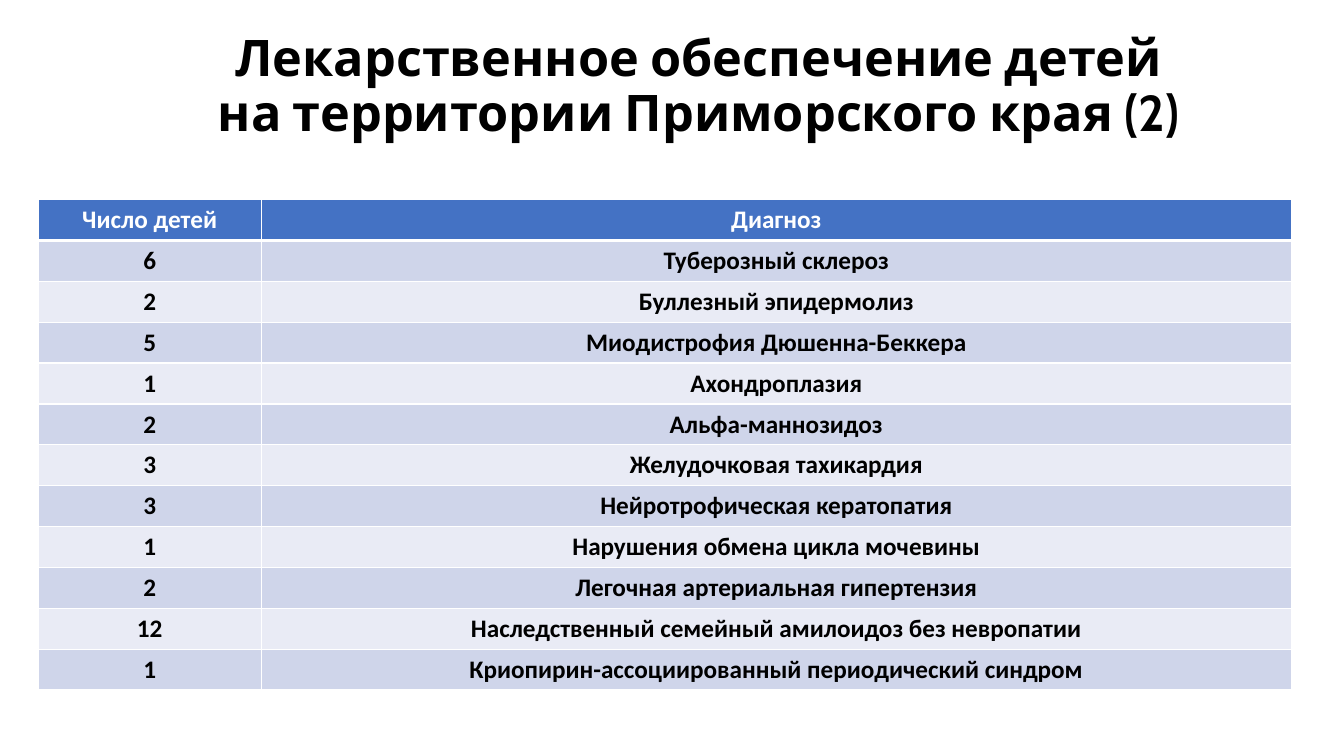
"""Build a slide with a table of children's diagnoses in Primorsky Krai."""
from lxml.etree import SubElement
from pptx import Presentation
from pptx.dml.color import RGBColor
from pptx.enum.text import MSO_ANCHOR, MSO_AUTO_SIZE, PP_ALIGN
from pptx.oxml.ns import qn
from pptx.util import Inches, Pt

WHITE = RGBColor(0xFF, 0xFF, 0xFF)
BLACK = RGBColor(0x00, 0x00, 0x00)
HEADER_BLUE = RGBColor(0x44, 0x72, 0xC4)
BAND_DARK = RGBColor(0xCF, 0xD5, 0xEA)
BAND_LIGHT = RGBColor(0xE9, 0xEB, 0xF5)

TITLE_LINES = ["Лекарственное обеспечение детей", "на территории Приморского края (2)"]
ROWS = [
    ("Число детей", "Диагноз"),
    ("6", "Туберозный склероз"),
    ("2", "Буллезный эпидермолиз"),
    ("5", "Миодистрофия Дюшенна-Беккера"),
    ("1", "Ахондроплазия"),
    ("2", "Альфа-маннозидоз"),
    ("3", "Желудочковая тахикардия"),
    ("3", "Нейротрофическая кератопатия"),
    ("1", "Нарушения обмена цикла мочевины"),
    ("2", "Легочная артериальная гипертензия"),
    ("12", "Наследственный семейный амилоидоз без невропатии"),
    ("1", "Криопирин-ассоциированный периодический синдром"),
]
COLUMN_WIDTHS = [Inches(2.21), Inches(10.22)]
TABLE_HEIGHT = Inches(4.87)


def add_run(paragraph, text, font_name, size, color):
    run = paragraph.add_run()
    run.text = text
    run.font.name = font_name
    run.font.size = Pt(size)
    run.font.bold = True
    run.font.color.rgb = color


def add_border(cell, side, width):
    line = SubElement(cell._tc.get_or_add_tcPr(), qn(f"a:ln{side}"), w=str(Pt(width)))
    fill = SubElement(line, qn("a:solidFill"))
    SubElement(fill, qn("a:srgbClr"), val=str(WHITE))


presentation = Presentation()
presentation.slide_width = Inches(13.33)
presentation.slide_height = Inches(7.5)
slide = presentation.slides.add_slide(presentation.slide_layouts[5])

title = slide.shapes.title
title.left, title.top = Inches(1.11), Inches(0.45)
title.width, title.height = Inches(11.64), Inches(0.84)
title.text_frame.auto_size = MSO_AUTO_SIZE.NONE
title.text_frame.vertical_anchor = MSO_ANCHOR.MIDDLE
paragraph = title.text_frame.paragraphs[0]
paragraph.alignment = PP_ALIGN.CENTER
paragraph.line_spacing = 0.9
for line_index, title_line in enumerate(TITLE_LINES):
    if line_index:
        paragraph.add_line_break()
    add_run(paragraph, title_line, "Cabin", 36, BLACK)

table = slide.shapes.add_table(
    len(ROWS), len(COLUMN_WIDTHS), Inches(0.38), Inches(1.98), sum(COLUMN_WIDTHS), TABLE_HEIGHT
).table
for column, width in zip(table.columns, COLUMN_WIDTHS):
    column.width = width

for row_index, row_texts in enumerate(ROWS):
    table.rows[row_index].height = TABLE_HEIGHT // len(ROWS)
    is_header = row_index == 0
    band_color = BAND_DARK if row_index % 2 else BAND_LIGHT
    for column_index, cell_text in enumerate(row_texts):
        cell = table.cell(row_index, column_index)
        add_border(cell, "L", 1)
        add_border(cell, "R", 1)
        add_border(cell, "T", 3 if row_index == 1 else 1)
        add_border(cell, "B", 3 if is_header else 1)
        cell.fill.solid()
        cell.fill.fore_color.rgb = HEADER_BLUE if is_header else band_color
        paragraph = cell.text_frame.paragraphs[0]
        paragraph.alignment = PP_ALIGN.CENTER
        add_run(paragraph, cell_text, "Calibri", 18, WHITE if is_header else BLACK)

presentation.save("out.pptx")
